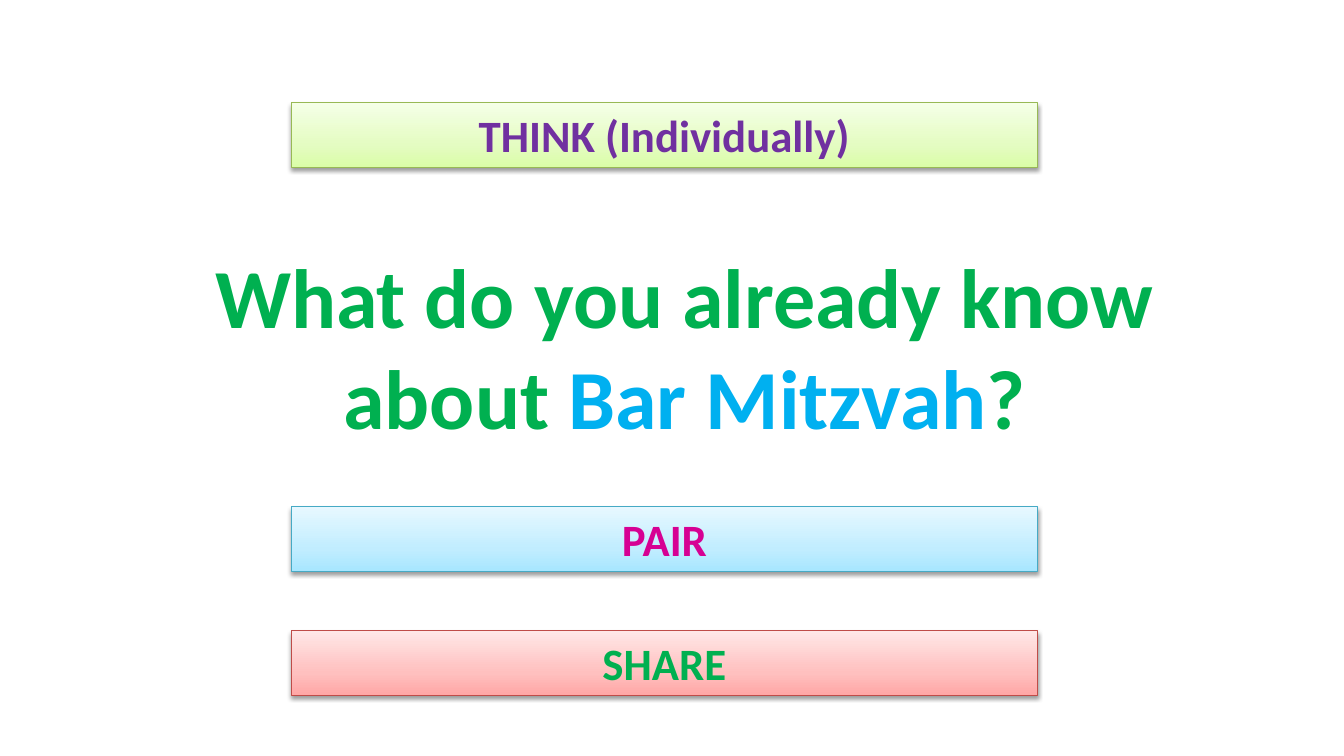
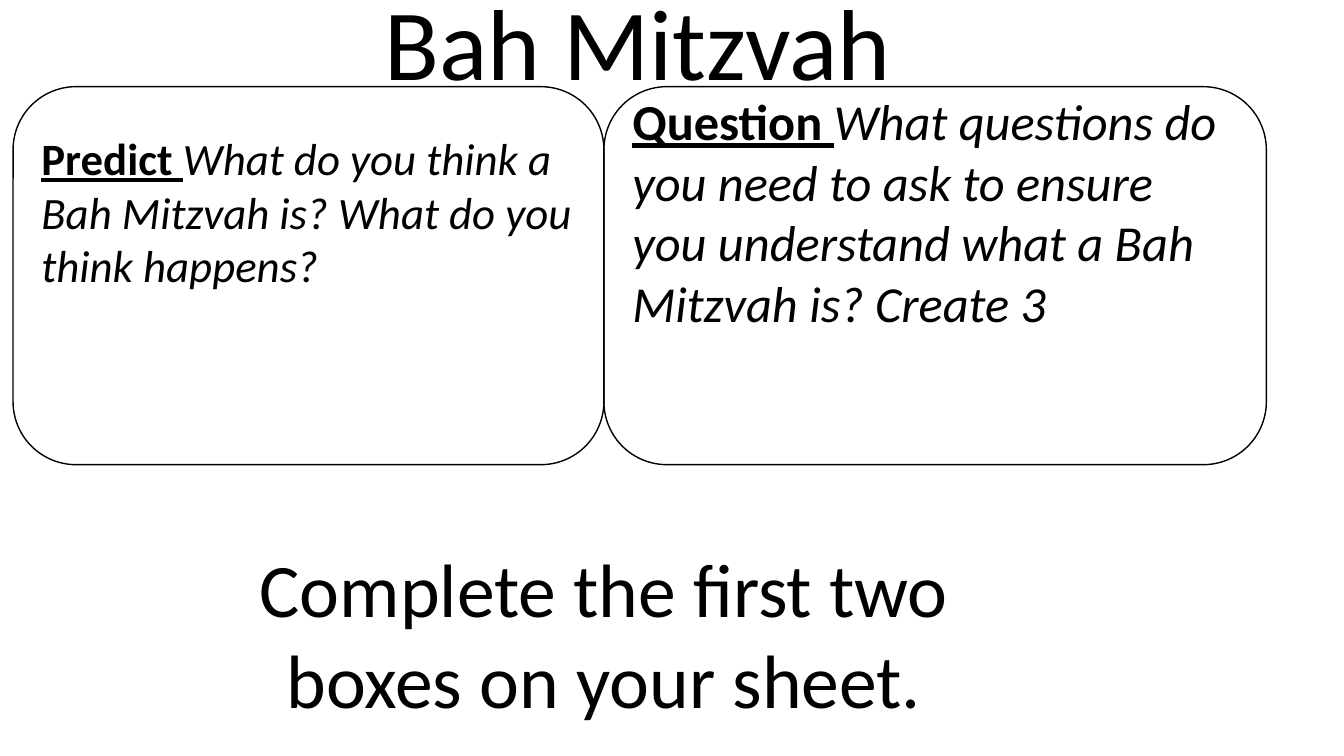
from copy import deepcopy

from pptx import Presentation
from pptx.dml.color import RGBColor
from pptx.enum.shapes import MSO_SHAPE as Preset
from pptx.enum.text import MSO_ANCHOR as Anchor, MSO_AUTO_SIZE as AutoSize, PP_ALIGN as Align
from pptx.oxml import parse_xml
from pptx.oxml.ns import nsdecls, qn
from pptx.util import Inches, Pt

FONT = "Calibri"
BLACK = "000000"
GREEN = "00B050"
SKY = "00B0F0"

BAR_LEFT, BAR_WIDTH, BAR_HEIGHT = 2.89, 7.4, 0.64
BARS = [
    ("THINK (Individually)", 1.02, "7030A0", "98B955", ("DAFDA7", "E4FCC2", "F5FFE7")),
    ("PAIR", 5.03, "D60093", "46AAC5", ("A7E6FF", "C1EDFF", "E7F8FF")),
    ("SHARE", 6.26, GREEN, "BF4C48", ("FFA6A5", "FFC0BF", "FFE7E7")),
]
GRADIENT_POSITIONS = (0, 0.35, 1)

BOX_LEFT, BOX_TOP, BOX_HEIGHT = 0.13, 0.86, 3.75
WRITING_SPACE = 1.33
BOXES = [
    ("Predict ", "What do you think a Bah Mitzvah is? What do you think happens?", 5.86, 32),
    ("Question ", "What questions do you need to ask to ensure you understand "
     "what a Bah Mitzvah is? Create 3", 6.57, 36),
]


def color(value):
    return RGBColor.from_string(value)


def style_paragraph(paragraph, size, align, text_color=BLACK, bold=None):
    paragraph.alignment = align
    font = paragraph.font
    font.name, font.size, font.bold = FONT, Pt(size), bold
    font.color.rgb = color(text_color)


def add_run(paragraph, text):
    run = paragraph.add_run()
    run.text = text
    return run


def add_text(slide, text, left, top, width, height, size, wrap=True):
    box = slide.shapes.add_textbox(Inches(left), Inches(top), Inches(width), Inches(height))
    frame = box.text_frame
    frame.word_wrap = wrap
    frame.auto_size = AutoSize.SHAPE_TO_FIT_TEXT
    paragraph = frame.paragraphs[0]
    style_paragraph(paragraph, size, Align.CENTER)
    if text:
        add_run(paragraph, text)
    return paragraph


def add_outlined(slide, preset, left, top, width, height, line_color, line_width):
    shape = slide.shapes.add_shape(
        preset, Inches(left), Inches(top), Inches(width), Inches(height))
    shape.shadow.inherit = False
    shape.fill.background()
    shape.line.color.rgb = color(line_color)
    shape.line.width = Pt(line_width)
    shape.text_frame.word_wrap = True
    shape.text_frame.vertical_anchor = Anchor.MIDDLE
    return shape


def fill_gradient(shape, colors):
    shape.fill.gradient()
    shape.fill.gradient_angle = 90
    stop_list = shape._element.spPr.find(qn("a:gradFill")).find(qn("a:gsLst"))
    stop_list.append(deepcopy(stop_list[0]))
    for stop, position, value in zip(shape.fill.gradient_stops, GRADIENT_POSITIONS, colors):
        stop.position = position
        stop.color.rgb = color(value)


def add_shadow(shape):
    shape._element.spPr.find(qn("a:effectLst")).append(parse_xml(
        f'<a:outerShdw {nsdecls("a")} blurRad="40000" dist="20000" dir="5400000" '
        f'rotWithShape="0"><a:srgbClr val="{BLACK}"><a:alpha val="38000"/>'
        '</a:srgbClr></a:outerShdw>'))


def add_bar(slide, text, top, text_color, line_color, colors):
    bar = add_outlined(
        slide, Preset.RECTANGLE, BAR_LEFT, top, BAR_WIDTH, BAR_HEIGHT, line_color, 0.75)
    fill_gradient(bar, colors)
    add_shadow(bar)
    bar.text_frame.vertical_anchor = Anchor.TOP
    bar.text_frame.auto_size = AutoSize.SHAPE_TO_FIT_TEXT
    paragraph = bar.text_frame.paragraphs[0]
    style_paragraph(paragraph, 32, Align.CENTER, text_color, True)
    add_run(paragraph, text)


def add_prompt_box(slide, left, label, prompt, width, size):
    box = add_outlined(
        slide, Preset.ROUNDED_RECTANGLE, left, BOX_TOP, width, BOX_HEIGHT, BLACK, 1)
    box.text_frame.margin_bottom = Inches(WRITING_SPACE)
    paragraph = box.text_frame.paragraphs[0]
    style_paragraph(paragraph, size, Align.LEFT)
    label_font = add_run(paragraph, label).font
    label_font.bold = label_font.underline = True
    add_run(paragraph, prompt).font.italic = True


def build_think_slide(slide):
    question = add_text(slide, "", 1.97, 2.38, 9.64, 2.12, 60)
    question.font.bold = True
    for text, text_color in (
            ("What do you already know about ", GREEN), ("Bar Mitzvah", SKY), ("?", GREEN)):
        add_run(question, text).font.color.rgb = color(text_color)
    for bar in BARS:
        add_bar(slide, *bar)


def build_predict_slide(slide):
    left = BOX_LEFT
    for label, prompt, width, size in BOXES:
        add_prompt_box(slide, left, label, prompt, width, size)
        left += width
    add_text(slide, "Bah Mitzvah", 3.69, -0.25, 5.27, 1.31, 72, wrap=False)
    add_text(slide, "Complete the first two boxes on your sheet.", 1.95, 5.33, 8.08, 1.92, 54)


def main():
    presentation = Presentation()
    presentation.slide_width = Inches(13.33)
    presentation.slide_height = Inches(7.5)
    blank = presentation.slide_layouts[6]
    for build in (build_think_slide, build_predict_slide):
        build(presentation.slides.add_slide(blank))
    presentation.save("out.pptx")


if __name__ == "__main__":
    main()
